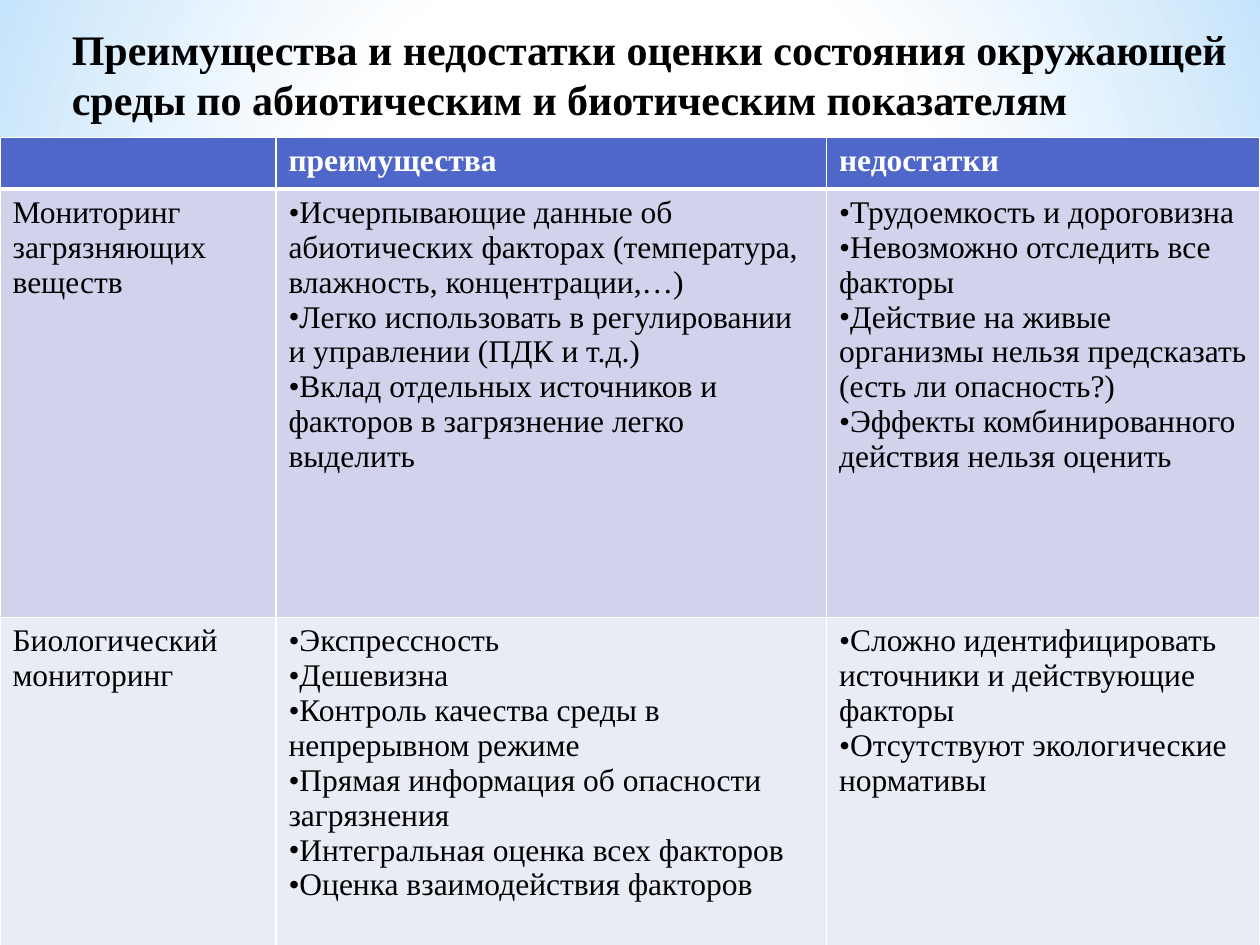
import dataclasses

import pptx
import pptx.dml.color
import pptx.enum.shapes
import pptx.enum.text
import pptx.oxml
import pptx.oxml.ns
import pptx.util
from lxml import etree

Inches = pptx.util.Inches
RECTANGLE = pptx.enum.shapes.MSO_SHAPE.RECTANGLE
OVAL = pptx.enum.shapes.MSO_SHAPE.OVAL
RADIAL = ('<a:path path="circle"><a:fillToRect l="50000" t="50000" '
          'r="50000" b="50000"/></a:path>')
VERTICAL = '<a:lin ang="5400000" scaled="0"/>'


@dataclasses.dataclass(frozen=True)
class Theme:
    """Colours, font and type sizes of the slide."""

    font: str = "Times New Roman"
    title_size: int = 24
    table_size: int = 18
    text: str = "000000"
    white: str = "FFFFFF"
    sky: str = "B4DCFA"
    header: str = "4E67C8"
    bands: tuple = ("D0D3EB", "E9EBF5")


class SlideBuilder:
    """Holds the theme and the current slide and adds elements to it."""

    def __init__(self, slide, theme):
        self.slide = slide
        self.theme = theme

    def add_run(self, paragraph, text, size, color, bold):
        """Add one formatted run to a paragraph."""
        run = paragraph.add_run()
        run.text = text
        run.font.name = self.theme.font
        run.font.size = pptx.util.Pt(size)
        run.font.bold = bold
        run.font.color.rgb = pptx.dml.color.RGBColor.from_string(color)

    def add_glow(self, kind, box, direction, stops):
        """Add a shape with a translucent gradient of position, colour, opacity."""
        shape = self.slide.shapes.add_shape(kind, *map(Inches, box))
        shape.shadow.inherit = False
        shape.line.fill.background()
        shape.fill.gradient()
        gradient = shape._element.spPr.find(pptx.oxml.ns.qn("a:gradFill"))
        stop_xml = "".join(
            f'<a:gs pos="{position * 1000}"><a:srgbClr val="{color}">'
            f'<a:alpha val="{opacity * 1000}"/></a:srgbClr></a:gs>'
            for position, color, opacity in stops)
        glow = pptx.oxml.parse_xml(
            f'<a:gradFill {pptx.oxml.ns.nsdecls("a")} rotWithShape="1">'
            f'<a:gsLst>{stop_xml}</a:gsLst>{direction}</a:gradFill>')
        gradient.getparent().replace(gradient, glow)

    def add_backdrop(self):
        """Layer the sky glows of the background."""
        white, sky = self.theme.white, self.theme.sky
        self.add_glow(RECTANGLE, (0, 4.23, 10, 3.27), RADIAL,
                      ((0, white, 91), (37, white, 76), (100, sky, 79)))
        self.add_glow(RECTANGLE, (0, 0, 10, 4.23), RADIAL,
                      ((0, white, 89), (48, white, 62), (100, sky, 79)))
        self.add_glow(RECTANGLE, (0, 2.9, 10, 2.5), VERTICAL,
                      ((0, white, 0), (29, white, 30), (45, sky, 40),
                       (55, white, 26), (65, sky, 60), (100, white, 0)))
        self.add_glow(OVAL, (0, 1.75, 10, 5.58), RADIAL,
                      ((0, white, 100), (54, white, 0)))

    def set_title(self, text, left, top, width, height):
        """Place and fill the title placeholder in front of the other elements."""
        title = self.slide.shapes.title
        title.left, title.top = Inches(left), Inches(top)
        title.width, title.height = Inches(width), Inches(height)
        frame = title.text_frame
        frame.word_wrap = True
        frame.auto_size = pptx.enum.text.MSO_AUTO_SIZE.NONE
        frame.vertical_anchor = pptx.enum.text.MSO_ANCHOR.MIDDLE
        paragraph = frame.paragraphs[0]
        paragraph.alignment = pptx.enum.text.PP_ALIGN.LEFT
        self.add_run(paragraph, text, self.theme.title_size, self.theme.text, True)
        self.slide.shapes._spTree.append(title._element)

    def set_borders(self, cell, bottom_width):
        """Draw white borders around a cell."""
        properties = cell._tc.get_or_add_tcPr()
        widths = {"lnL": 1, "lnR": 1, "lnT": 1, "lnB": bottom_width}
        for index, (side, width) in enumerate(widths.items()):
            line = pptx.oxml.parse_xml(
                f'<a:{side} {pptx.oxml.ns.nsdecls("a")} w="{pptx.util.Pt(width)}">'
                f'<a:solidFill><a:srgbClr val="{self.theme.white}"/></a:solidFill>'
                f'</a:{side}>')
            properties.insert(index, line)

    def add_bullet(self, paragraph):
        """Give a paragraph a bullet in the text font."""
        properties = paragraph._p.get_or_add_pPr()
        for tag, name, value in (("a:buFont", "typeface", self.theme.font),
                                 ("a:buChar", "char", "•")):
            etree.SubElement(properties, pptx.oxml.ns.qn(tag)).set(name, value)

    def fill_cell(self, cell, content, fill, color, bold):
        """Write a string or a bulleted list into a cell."""
        cell.fill.solid()
        cell.fill.fore_color.rgb = pptx.dml.color.RGBColor.from_string(fill)
        bulleted = isinstance(content, list)
        frame = cell.text_frame
        for index, text in enumerate(content if bulleted else [content]):
            paragraph = frame.add_paragraph() if index else frame.paragraphs[0]
            if bulleted:
                self.add_bullet(paragraph)
            if text:
                self.add_run(paragraph, text, self.theme.table_size, color, bold)

    def add_table(self, rows, left, top, column_widths, row_heights):
        """Add a table with a header row and banded body rows."""
        table = self.slide.shapes.add_table(
            len(rows), len(column_widths), Inches(left), Inches(top),
            Inches(sum(column_widths)), Inches(sum(row_heights))).table
        for column, width in zip(table.columns, column_widths):
            column.width = Inches(width)
        for index, (row, height) in enumerate(zip(table.rows, row_heights)):
            row.height = Inches(height)
            is_header = index == 0
            fill = self.theme.header if is_header else self.theme.bands[(index - 1) % 2]
            color = self.theme.white if is_header else self.theme.text
            for cell, content in zip(row.cells, rows[index]):
                self.fill_cell(cell, content, fill, color, is_header)
                self.set_borders(cell, 3 if is_header else 1)


TITLE = ("Преимущества и недостатки оценки состояния окружающей среды "
         "по абиотическим и биотическим показателям")
ROWS = [
    ["", "преимущества", "недостатки"],
    [
        "Мониторинг загрязняющих веществ",
        [
            "Исчерпывающие данные об абиотических факторах "
            "(температура, влажность, концентрации,…)",
            "Легко использовать в регулировании и управлении (ПДК и т.д.)",
            "Вклад отдельных источников и факторов в загрязнение легко выделить",
        ],
        [
            "Трудоемкость и дороговизна",
            "Невозможно отследить все факторы",
            "Действие на живые организмы нельзя предсказать (есть ли опасность?)",
            "Эффекты комбинированного действия нельзя оценить",
        ],
    ],
    [
        "Биологический мониторинг",
        [
            "Экспрессность",
            "Дешевизна",
            "Контроль качества среды в непрерывном режиме",
            "Прямая информация об опасности загрязнения",
            "Интегральная оценка всех факторов",
            "Оценка взаимодействия факторов",
        ],
        [
            "Сложно идентифицировать источники и действующие факторы",
            "Отсутствуют экологические нормативы",
        ],
    ],
]


def main():
    """Build and save the slide."""
    presentation = pptx.Presentation()
    presentation.slide_width = Inches(10)
    presentation.slide_height = Inches(7.5)
    slide = presentation.slides.add_slide(presentation.slide_layouts[5])
    builder = SlideBuilder(slide, Theme())
    builder.add_backdrop()
    builder.add_table(ROWS, 0, 1.09, (2.19, 4.37, 3.44), (0.41, 3.4, 2.8))
    builder.set_title(TITLE, 0.47, 0, 9.38, 1.17)
    presentation.save("out.pptx")


if __name__ == "__main__":
    main()
